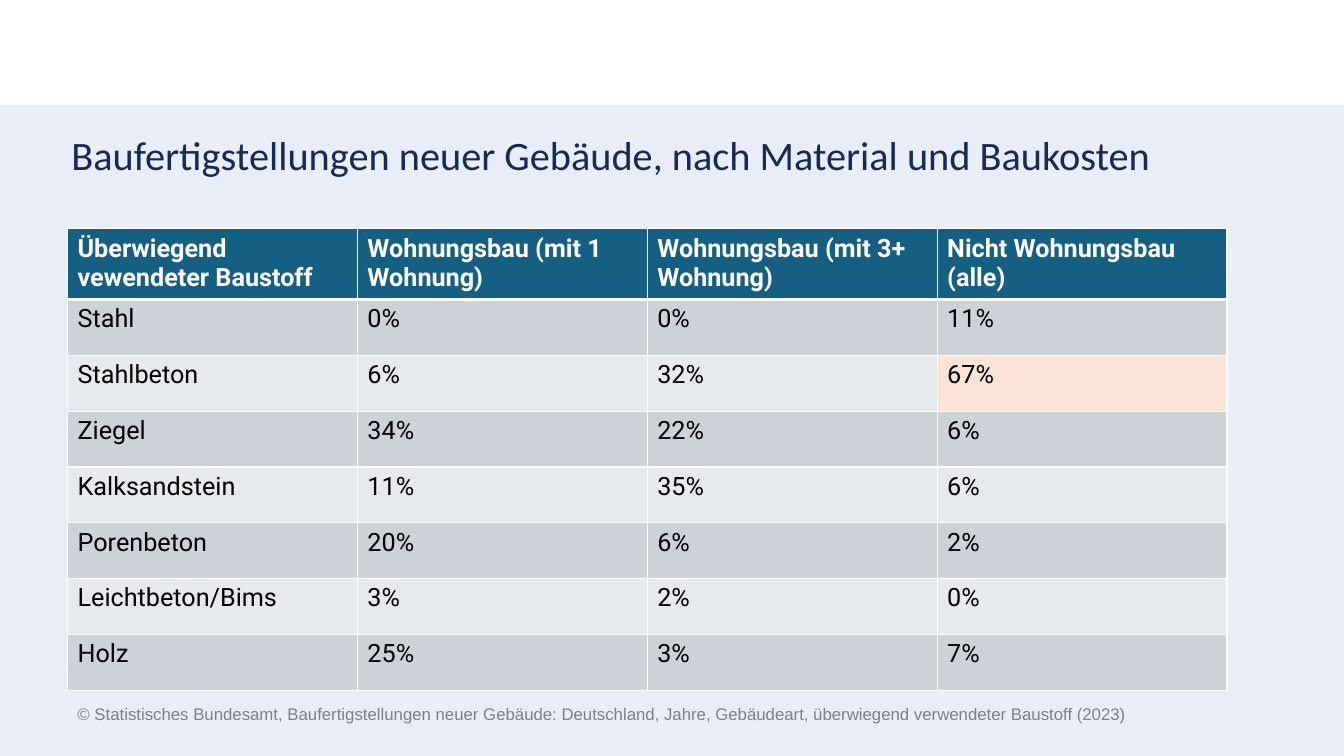
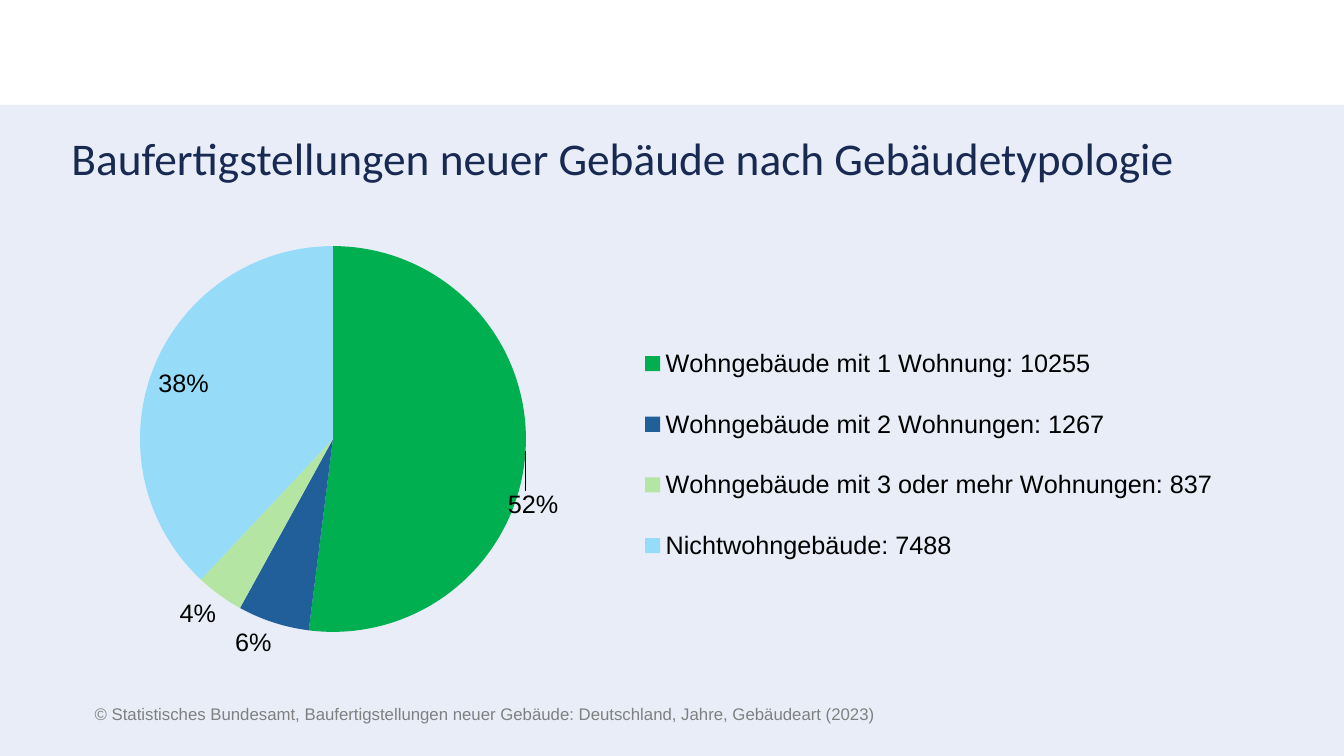
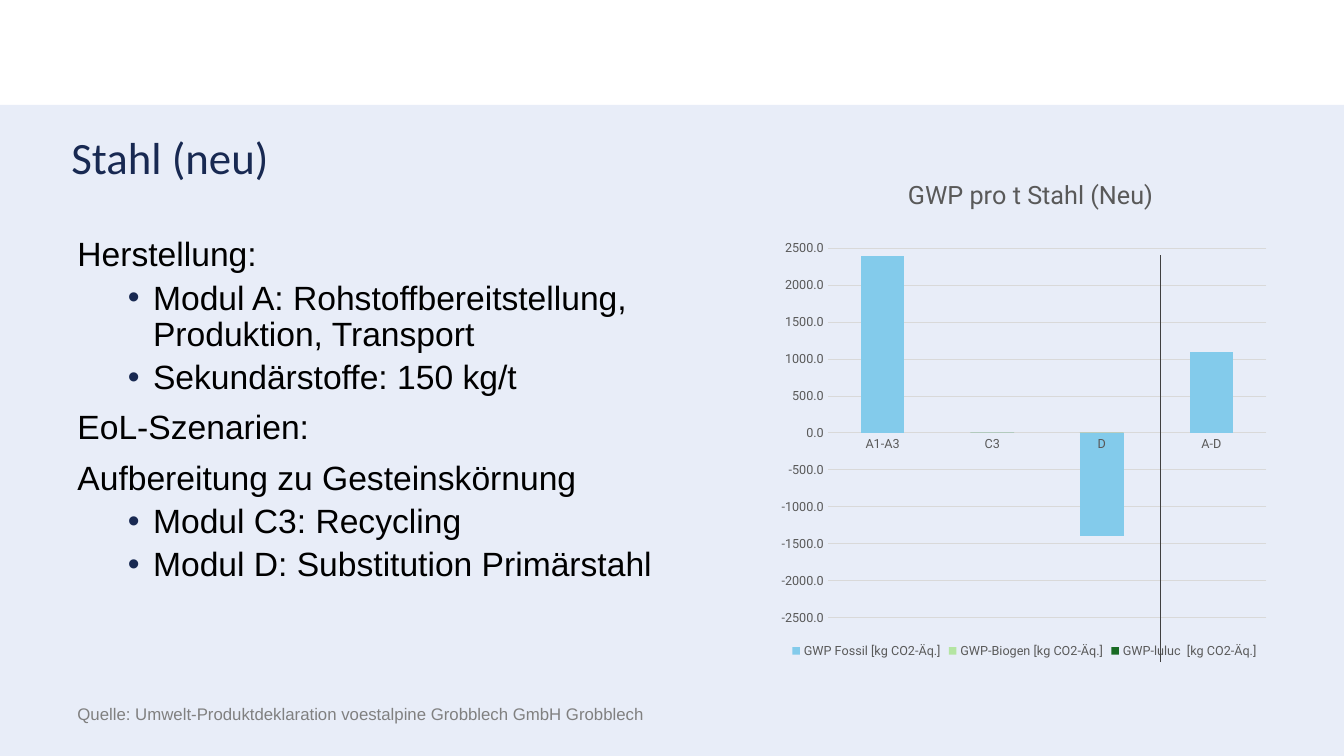
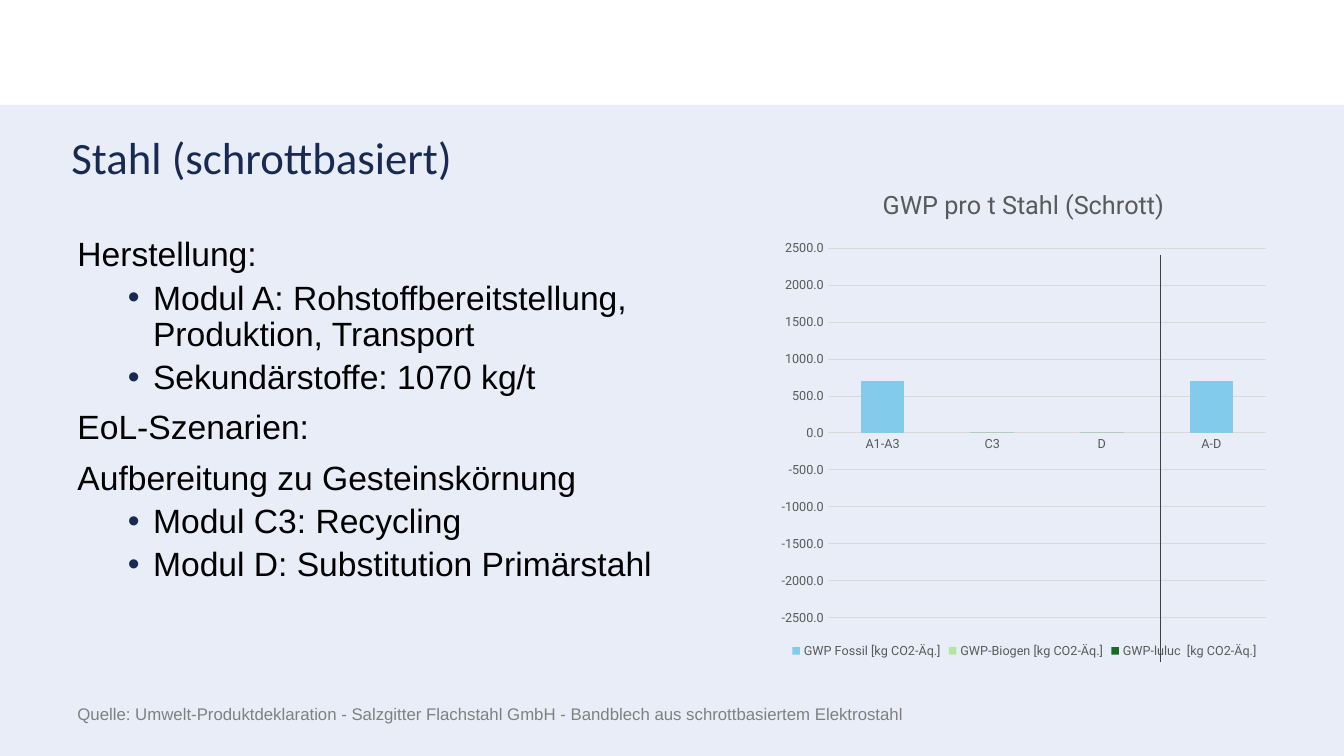
from lxml.etree import SubElement
from pptx import Presentation
from pptx.chart.data import CategoryChartData
from pptx.dml.color import RGBColor
from pptx.enum.chart import XL_CHART_TYPE, XL_LABEL_POSITION, XL_LEGEND_POSITION, XL_TICK_MARK
from pptx.enum.shapes import MSO_CONNECTOR, MSO_SHAPE
from pptx.oxml import parse_xml
from pptx.oxml.ns import nsdecls, qn
from pptx.util import Inches, Pt

COLORS = {
    "band": "E8EDF8", "title": "182952", "text": "000000", "source": "808080",
    "white": "FFFFFF", "header": "156082", "odd_row": "CCD2D8", "even_row": "E6EAEC",
    "highlight": "FBE3D6", "axis": "595959", "grid": "D9D9D9", "divider": "404040",
}

MATERIAL_ROWS = [
    ("Überwiegend vewendeter Baustoff", "Wohnungsbau (mit 1 Wohnung)",
     "Wohnungsbau (mit 3+ Wohnung)", "Nicht Wohnungsbau (alle)"),
    ("Stahl", "0%", "0%", "11%"),
    ("Stahlbeton", "6%", "32%", "67%"),
    ("Ziegel", "34%", "22%", "6%"),
    ("Kalksandstein", "11%", "35%", "6%"),
    ("Porenbeton", "20%", "6%", "2%"),
    ("Leichtbeton/Bims", "3%", "2%", "0%"),
    ("Holz", "25%", "3%", "7%"),
]
HIGHLIGHTED_CELL = (2, 3)

BUILDING_TYPES = [
    ("Wohngebäude mit 1 Wohnung: 10255", 52, "00B050"),
    ("Wohngebäude mit 2 Wohnungen: 1267", 6, "215F9A"),
    ("Wohngebäude mit 3 oder mehr Wohnungen: 837", 4, "B4E5A2"),
    ("Nichtwohngebäude: 7488", 38, "96DCF8"),
]

MODULES = ["A1-A3", "C3", "D", "A-D"]
GWP_SERIES = [
    ("GWP Fossil [kg CO2-Äq.]", "83CBEB"),
    ("GWP-Biogen [kg CO2-Äq.]", "B4E5A2"),
    ("GWP-luluc  [kg CO2-Äq.]", "196B24"),
]
NO_GWP = [0, 0, 0, 0]

STEEL_SLIDES = [
    {
        "title": "Stahl (neu)",
        "secondary": "150 kg/t",
        "source": "Quelle: Umwelt-Produktdeklaration voestalpine Grobblech GmbH Grobblech",
        "chart_title": "GWP pro t Stahl (Neu)",
        "title_place": (0.26, 0.01),
        "values": [[2400, 0, -1400, 1100], NO_GWP, NO_GWP],
    },
    {
        "title": "Stahl (schrottbasiert)",
        "secondary": "1070 kg/t",
        "source": "Quelle: Umwelt-Produktdeklaration - Salzgitter Flachstahl GmbH"
                  " - Bandblech aus schrottbasiertem Elektrostahl",
        "chart_title": "GWP pro t Stahl (Schrott)",
        "title_place": (0.21, 0.03),
        "values": [[700, 0, 0, 700], NO_GWP, NO_GWP],
    },
]


def steel_outline(secondary):
    """Return (level, text) pairs."""
    return [
        (0, "Herstellung:"),
        (1, "Modul A: Rohstoffbereitstellung, Produktion, Transport"),
        (1, f"Sekundärstoffe: {secondary}"),
        (0, "EoL-Szenarien:"),
        (0, "Aufbereitung zu Gesteinskörnung"),
        (1, "Modul C3: Recycling"),
        (1, "Modul D: Substitution Primärstahl"),
    ]


def rgb(name):
    return RGBColor.from_string(COLORS.get(name, name))


def fill_solid(target, color):
    target.fill.solid()
    target.fill.fore_color.rgb = rgb(color)


def style_font(font, size, name, color, bold=False):
    font.size, font.name, font.bold = Pt(size), name, bold
    font.color.rgb = rgb(color)


def add_run(paragraph, text, size, font_name, color, bold=False):
    run = paragraph.add_run()
    run.text = text
    style_font(run.font, size, font_name, color, bold)


def add_bullet(paragraph):
    properties = paragraph._p.get_or_add_pPr()
    properties.set("marL", str(Inches(0.75)))
    properties.set("indent", str(Inches(-0.25)))
    bullet_color = SubElement(properties, qn("a:buClr"))
    SubElement(bullet_color, qn("a:srgbClr")).set("val", COLORS["title"])
    SubElement(properties, qn("a:buFont")).set("typeface", "Arial")
    SubElement(properties, qn("a:buChar")).set("char", "•")


def add_text(slide, place, items, size, font_name, color):
    """Add a text box of (level, text) paragraphs; level 1 is bulleted."""
    frame = slide.shapes.add_textbox(*map(Inches, place)).text_frame
    frame.word_wrap = True
    for index, (level, text) in enumerate(items):
        paragraph = frame.add_paragraph() if index else frame.paragraphs[0]
        if level:
            add_bullet(paragraph)
        paragraph.line_spacing = 0.9
        if index:
            paragraph.space_before = Pt(5 if level else 10)
        add_run(paragraph, text, size, font_name, color)


def add_base_slide(presentation, title, title_size, source, source_left=0.67):
    """Add a slide with the shared band, title and source line."""
    slide = presentation.slides.add_slide(presentation.slide_layouts[6])
    band = slide.shapes.add_shape(
        MSO_SHAPE.RECTANGLE, 0, Inches(1.04), presentation.slide_width, Inches(6.46))
    band.shadow.inherit = False
    fill_solid(band, "band")
    band.line.fill.background()
    add_text(slide, (0.61, 1.3, 12.11, 0.75), [(0, title)], title_size, "Calibri", "title")
    add_text(slide, (source_left, 6.95, 11.5, 0.37), [(0, source)], 12, "Arial", "source")
    return slide


def set_borders(cell, widths):
    properties = cell._tc.get_or_add_tcPr()
    for position, (side, width) in enumerate(widths.items()):
        properties.insert(position, parse_xml(
            f'<a:ln{side} {nsdecls("a")} w="{Pt(width)}"><a:solidFill>'
            f'<a:srgbClr val="{COLORS["white"]}"/></a:solidFill></a:ln{side}>'))


def add_material_table(slide):
    rows, columns = len(MATERIAL_ROWS), len(MATERIAL_ROWS[0])
    table = slide.shapes.add_table(
        rows, columns, Inches(0.67), Inches(2.27), Inches(11.5), Inches(4.55)).table
    for row_index, texts in enumerate(MATERIAL_ROWS):
        is_header = row_index == 0
        table.rows[row_index].height = Inches(0.67 if is_header else 3.88 / (rows - 1))
        row_fill = "header" if is_header else "odd_row" if row_index % 2 else "even_row"
        for column_index, text in enumerate(texts):
            cell = table.cell(row_index, column_index)
            highlighted = (row_index, column_index) == HIGHLIGHTED_CELL
            fill_solid(cell, "highlight" if highlighted else row_fill)
            add_run(cell.text_frame.paragraphs[0], text, 18, "Roboto",
                    "white" if is_header else "text", is_header)
            set_borders(cell, {"L": 0.96, "R": 0.96, "T": 3 if row_index == 1 else 0.96,
                               "B": 3 if is_header else 0.96})


def manual_layout(content):
    return parse_xml(f'<c:layout {nsdecls("c")}><c:manualLayout>{content}'
                     '</c:manualLayout></c:layout>')


def place_chart_part(chart, part_name, **fractions):
    """Fix the place of a chart part, in fractions of the chart."""
    part = chart.element.xpath(f"c:chart/c:{part_name}")[0]
    for old_layout in part.findall(qn("c:layout")):
        part.remove(old_layout)
    target = '<c:layoutTarget val="inner"/>' if part_name == "plotArea" else ""
    modes = "".join(f'<c:{key}Mode val="edge"/>' for key in "xy")
    values = "".join(f'<c:{key} val="{value}"/>' for key, value in fractions.items())
    predecessor = {"title": "c:tx", "legend": "c:legendPos"}.get(part_name)
    has_predecessor = predecessor and part.find(qn(predecessor)) is not None
    part.insert(1 if has_predecessor else 0, manual_layout(target + modes + values))


def add_chart(slide, kind, place, categories, series, legend_position, legend_style):
    data = CategoryChartData()
    data.categories = categories
    for name, values in series:
        data.add_series(name, values)
    chart = slide.shapes.add_chart(kind, *map(Inches, place), data).chart
    style_font(chart.font, 10, "Roboto", "text")
    chart.has_title = False
    chart.has_legend = True
    chart.legend.position = legend_position
    chart.legend.include_in_layout = False
    style_font(chart.legend.font, *legend_style)
    return chart


def add_share_labels(series):
    """Show percentages; shift the first label and set the second outside."""
    labels = series.data_labels
    labels.show_percentage, labels.show_value = True, False
    labels.number_format, labels.number_format_is_linked = "0%", False
    labels.position = XL_LABEL_POSITION.BEST_FIT
    style_font(labels.font, 18, "Arial", "text")
    for index, position in enumerate(
            (XL_LABEL_POSITION.BEST_FIT, XL_LABEL_POSITION.OUTSIDE_END)):
        label = series.points[index].data_label
        style_font(label.font, 18, "Arial", "text")
        label.position = position
    label_elements = labels._element.findall(qn("c:dLbl"))
    for element in label_elements:
        element.find(qn("c:showVal")).set("val", "0")
        element.find(qn("c:showPercent")).set("val", "1")
    label_elements[0].insert(1, manual_layout('<c:x val="-0.02"/><c:y val="0.12"/>'))


def add_building_pie(slide):
    names, shares, colors = zip(*BUILDING_TYPES)
    chart = add_chart(slide, XL_CHART_TYPE.PIE, (0.67, 2.31, 11.7, 4.4), names,
                      [("Series 1", shares)], XL_LEGEND_POSITION.RIGHT, (18, "Arial", "text"))
    place_chart_part(chart, "plotArea", x=0.06, y=0.03, w=0.33, h=0.87)
    place_chart_part(chart, "legend", x=0.48, y=0.19, w=0.5, h=0.62)
    plot = chart.plots[0]
    plot.vary_by_categories = True
    series = plot.series[0]
    for index, color in enumerate(colors):
        fill_solid(series.points[index].format, color)
    add_share_labels(series)


def add_gwp_chart(slide, steel):
    series = [(name, values) for (name, _), values in zip(GWP_SERIES, steel["values"])]
    chart = add_chart(slide, XL_CHART_TYPE.COLUMN_STACKED, (7.66, 1.68, 5, 4.89), MODULES,
                      series, XL_LEGEND_POSITION.BOTTOM, (9, "Roboto", "axis"))
    chart.has_title = True
    add_run(chart.chart_title.text_frame.paragraphs[0], steel["chart_title"],
            18, "Roboto", "axis")
    title_x, title_y = steel["title_place"]
    place_chart_part(chart, "title", x=title_x, y=title_y)
    place_chart_part(chart, "plotArea", x=0.11, y=0.16, w=0.87, h=0.75)

    plot = chart.plots[0]
    plot.gap_width, plot.overlap, plot.vary_by_categories = 150, 100, False
    for plotted, (_, color) in zip(plot.series, GWP_SERIES):
        fill_solid(plotted.format, color)
        plotted.invert_if_negative = False

    category_axis, value_axis = chart.category_axis, chart.value_axis
    for axis in (category_axis, value_axis):
        axis.major_tick_mark = axis.minor_tick_mark = XL_TICK_MARK.NONE
        style_font(axis.tick_labels.font, 9, "Roboto", "axis")
    value_axis.minimum_scale, value_axis.maximum_scale = -2500, 2500
    value_axis.major_unit = 500
    value_axis.tick_labels.number_format = "0.0"
    value_axis.tick_labels.number_format_is_linked = False
    value_axis.format.line.fill.background()
    for line in (category_axis.format.line, value_axis.major_gridlines.format.line):
        line.color.rgb, line.width = rgb("grid"), Pt(0.75)


def add_total_divider(slide):
    """Separate the A-D total from the single modules."""
    divider = slide.shapes.add_connector(
        MSO_CONNECTOR.STRAIGHT, Inches(11.51), Inches(6.57), Inches(11.51), Inches(2.53))
    divider.line.color.rgb, divider.line.width = rgb("divider"), Pt(0.75)
    SubElement(divider._element.spPr, qn("a:effectLst"))


def main():
    presentation = Presentation()
    presentation.slide_width, presentation.slide_height = Inches(13.33), Inches(7.5)

    add_material_table(add_base_slide(
        presentation, "Baufertigstellungen neuer Gebäude, nach Material und Baukosten", 28.8,
        "© Statistisches Bundesamt, Baufertigstellungen neuer Gebäude: Deutschland, Jahre, "
        "Gebäudeart, überwiegend verwendeter Baustoff (2023)"))
    add_building_pie(add_base_slide(
        presentation, "Baufertigstellungen neuer Gebäude nach Gebäudetypologie", 32.4,
        "© Statistisches Bundesamt, Baufertigstellungen neuer Gebäude: Deutschland, Jahre, "
        "Gebäudeart (2023)", source_left=0.84))
    for steel in STEEL_SLIDES:
        slide = add_base_slide(presentation, steel["title"], 32, steel["source"])
        add_text(slide, (0.67, 2.31, 6.5, 4.47), steel_outline(steel["secondary"]),
                 24, "Arial", "text")
        add_gwp_chart(slide, steel)
        add_total_divider(slide)

    presentation.save("out.pptx")


if __name__ == "__main__":
    main()
